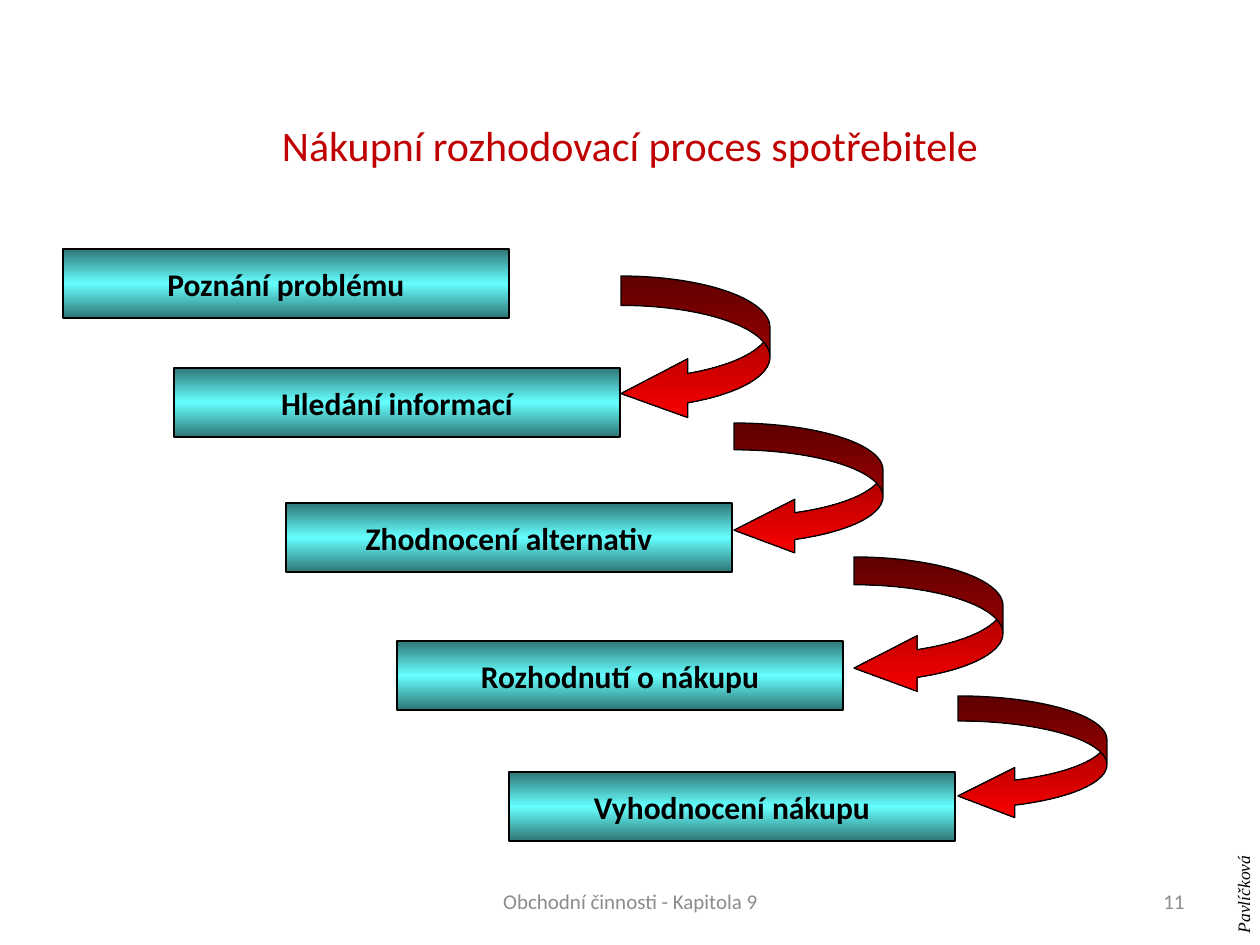
import copy

import pptx
import pptx.dml.color
import pptx.enum.shapes
import pptx.enum.text
import pptx.util

EMU_PER_PX = 914400 / 126
SHAPES = pptx.enum.shapes.MSO_SHAPE
ALIGN = pptx.enum.text.PP_ALIGN
ANCHOR = pptx.enum.text.MSO_ANCHOR


def px(n):
    return pptx.util.Emu(round(n * EMU_PER_PX))


def rgb(value):
    return pptx.dml.color.RGBColor.from_string(value)


class Deck:
    """Holds the style and the current slide."""

    black, title_red, grey = "000000", "C00000", "8C8C8C"
    box_colors = ("2F7676", "66FFFF", "2F7676")
    arrow_colors = ("760000", "FF0000")
    arrow_adjustments = (0.2, 0.4, 0.454)

    def __init__(self):
        self.prs = pptx.Presentation()
        self.prs.slide_width, self.prs.slide_height = px(1260), px(945)
        self.s = self.prs.slides.add_slide(self.prs.slide_layouts[6])

    def set_text(self, sp, text, color, align, anchor=ANCHOR.MIDDLE, wrap=True, **style):
        tf = sp.text_frame
        tf.word_wrap, tf.vertical_anchor = wrap, anchor
        p = tf.paragraphs[0]
        p.alignment = align
        r = p.add_run()
        r.text = text
        r.font.color.rgb = rgb(color)
        for key, value in {"name": "Calibri", **style}.items():
            setattr(r.font, key, value)

    def text(self, box, text, color, align, rotation=0, **style):
        sp = self.s.shapes.add_textbox(*map(px, box))
        sp.rotation = rotation
        self.set_text(sp, text, color, align, **style)

    def gradient(self, fill, colors):
        """Fill from top to bottom with evenly spaced colours."""
        fill.gradient()
        fill.gradient_angle = 270
        stop = fill.gradient_stops[0]._gs
        for _ in colors[2:]:
            stop.addnext(copy.deepcopy(stop))
        for i, (stop, color) in enumerate(zip(fill.gradient_stops, colors)):
            stop.position = i / (len(colors) - 1)
            stop.color.rgb = rgb(color)

    def shape(self, kind, box, colors):
        sp = self.s.shapes.add_shape(kind, *map(px, box))
        sp.shadow.inherit = False
        self.gradient(sp.fill, colors)
        sp.line.color.rgb = rgb(self.black)
        sp.line.width = pptx.util.Pt(0.75)
        return sp

    def step(self, x, y, label):
        sp = self.shape(SHAPES.RECTANGLE, (x, y, 446, 69), self.box_colors)
        self.set_text(sp, label, self.black, ALIGN.CENTER, wrap=False,
                      size=pptx.util.Pt(18), bold=True)

    def arrow(self, x, y, height):
        sp = self.shape(SHAPES.CURVED_LEFT_ARROW, (x, y, 149, height), self.arrow_colors)
        for i, value in enumerate(self.arrow_adjustments):
            sp.adjustments[i] = value


def main():
    deck = Deck()
    small = pptx.util.Pt(12)
    deck.text((431, 876, 399, 50), "Obchodní činnosti - Kapitola 9", deck.grey,
              ALIGN.CENTER, size=small)
    deck.text((903, 876, 294, 50), "11", deck.grey, ALIGN.RIGHT, size=small)
    deck.text((63, 118, 1134, 54), "Nákupní rozhodovací proces spotřebitele",
              deck.title_red, ALIGN.CENTER, size=pptx.util.Pt(24))
    deck.text((1192, 877, 103, 34), "Pavlíčková", deck.black, ALIGN.LEFT, rotation=270,
              anchor=ANCHOR.TOP, wrap=False, name="Times New Roman",
              size=pptx.util.Pt(10), italic=True)

    steps = [
        (249, "Poznání problému"),
        (368, "Hledání informací"),
        (503, "Zhodnocení alternativ"),
        (641, "Rozhodnutí o nákupu"),
        (772, "Vyhodnocení nákupu"),
    ]
    for i, (y, label) in enumerate(steps):
        deck.step(63 + 223 * i // 2, y, label)

    for x, y, height in [(621, 276, 147), (734, 423, 134), (854, 557, 139), (958, 696, 125)]:
        deck.arrow(x, y, height)

    deck.prs.save("out.pptx")


if __name__ == "__main__":
    main()
